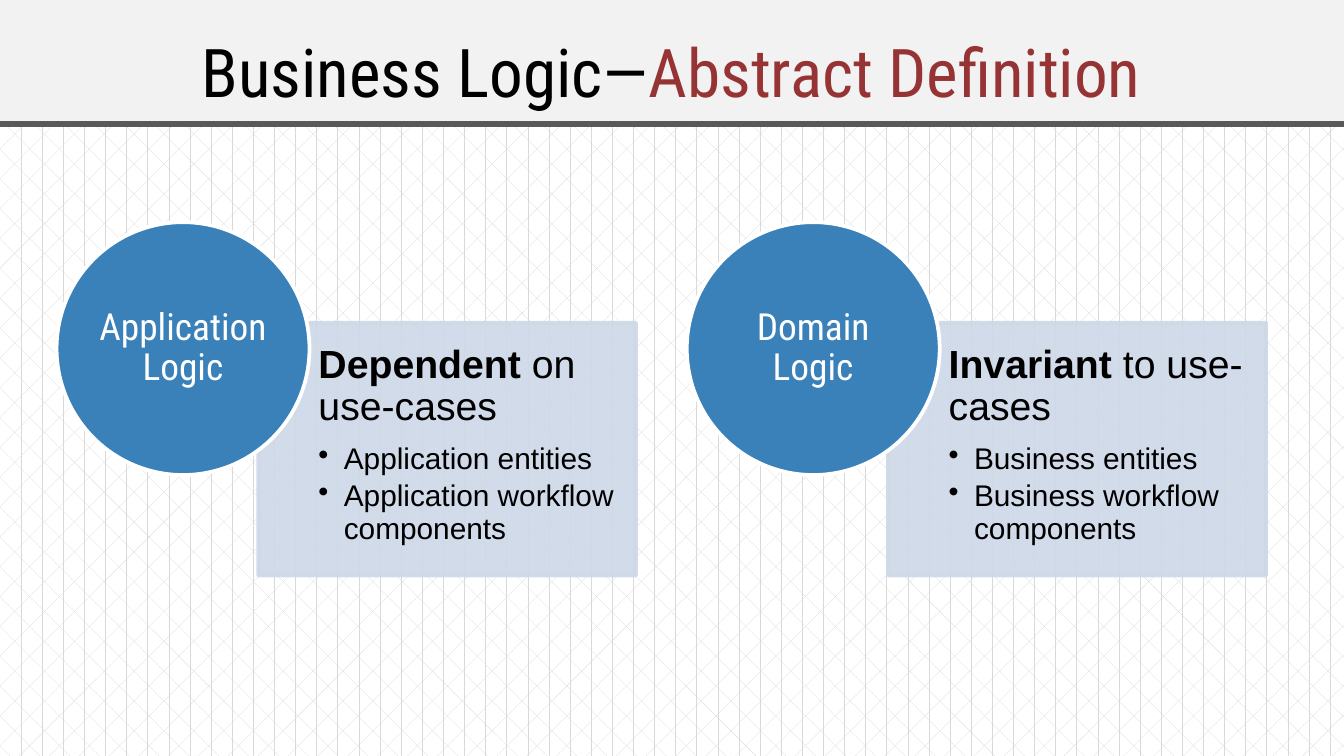
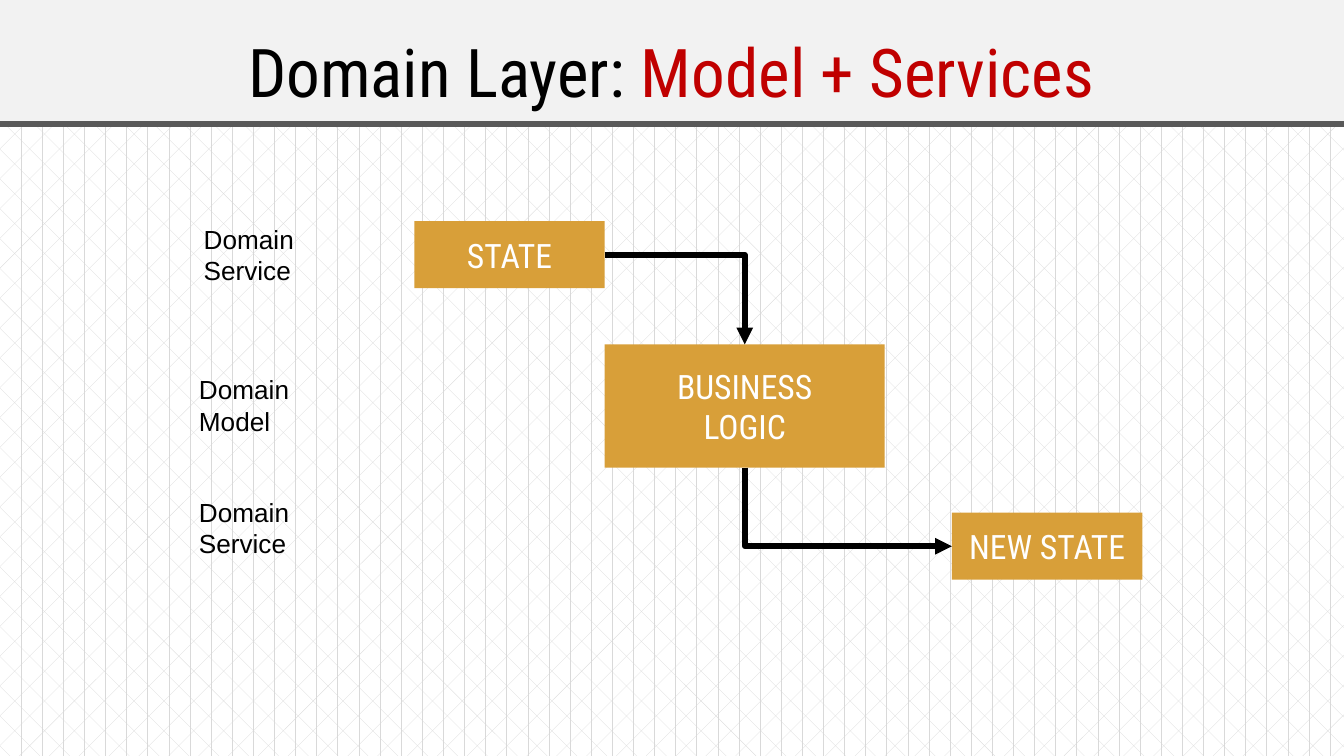
from dataclasses import dataclass
from lxml.etree import SubElement
from pptx import Presentation
from pptx.dml.color import RGBColor
from pptx.enum.dml import MSO_PATTERN
from pptx.enum.shapes import MSO_CONNECTOR, MSO_SHAPE
from pptx.enum.text import MSO_ANCHOR, MSO_AUTO_SIZE, PP_ALIGN
from pptx.oxml.ns import qn
from pptx.util import Cm, Pt


@dataclass(frozen=True)
class Theme:
    black: str = "000000"
    white: str = "FFFFFF"
    grid: str = "D9D9D9"
    band: str = "F2F2F2"
    rule: str = "595959"
    wine: str = "963334"
    red: str = "C00000"
    blue: str = "3A81BA"
    pale: str = "CED8E7"
    gold: str = "D89F39"
    head: str = "Roboto Condensed"
    body: str = "Arial"
    title: int = 36
    lead: int = 21
    disc: int = 20
    box: int = 18
    item: int = 16
    label: int = 14


THEME = Theme()
MID = {"alignment": PP_ALIGN.CENTER}
LEFT = {"alignment": PP_ALIGN.LEFT}
TIGHT = {"line_spacing": 0.9}


def put(obj, vals):
    for name, val in vals.items():
        setattr(obj, name, val)


def place(shape, left, top, width, height):
    put(shape, {"left": Cm(left), "top": Cm(top),
                "width": Cm(width), "height": Cm(height)})


def pads(left, top, right, bottom):
    return {"margin_left": Cm(left), "margin_top": Cm(top),
            "margin_right": Cm(right), "margin_bottom": Cm(bottom)}


def paint(shape, color, edge=None, width=0):
    shape.fill.solid()
    shape.fill.fore_color.rgb = RGBColor.from_string(color)
    if edge:
        shape.line.color.rgb = RGBColor.from_string(edge)
        shape.line.width = Pt(width)
    else:
        shape.line.fill.background()


def font(name, size, color, bold=False):
    return {"name": name, "size": Pt(size), "bold": bold}, color


def write(frame, paras, form):
    put(frame, {"word_wrap": True, **form})
    for num, (runs, style) in enumerate(paras):
        para = frame.add_paragraph() if num else frame.paragraphs[0]
        put(para, style)
        for text, (face, color) in runs:
            run = para.add_run()
            run.text = text
            put(run.font, face)
            run.font.color.rgb = RGBColor.from_string(color)


def add_form(slide, kind, spot):
    shape = slide.shapes.add_shape(kind, *map(Cm, spot))
    shape.shadow.inherit = False
    return shape


def add_page(deck, first, second, color):
    slide = deck.slides.add_slide(deck.slide_layouts[5])
    title = slide.shapes.title
    place(title, -0.43, -0.25, 26.24, 2.59)
    paint(title, THEME.band, THEME.rule, 3)
    runs = [(text, font(THEME.head, THEME.title, ink))
            for text, ink in ((first, THEME.black), (second, color))]
    write(title.text_frame, [(runs, MID)],
          {"vertical_anchor": MSO_ANCHOR.BOTTOM,
           "auto_size": MSO_AUTO_SIZE.NONE, **pads(0.25, 0.25, 0.25, 0.25)})
    return slide


def add_card(slide, left, name, lead, rest, items):
    card = add_form(slide, MSO_SHAPE.RECTANGLE, (left + 3.81, 6.1, 7.14, 4.78))
    paint(card, THEME.pale, THEME.pale, 2)
    for tint in card._element.spPr.iter(qn("a:srgbClr")):
        SubElement(tint, qn("a:alpha"), val="90000")
    runs = [(lead, font(THEME.body, THEME.lead, THEME.black, True)),
            (rest, font(THEME.body, THEME.lead, THEME.black))]
    paras = [(runs, {**LEFT, **TIGHT, "space_after": Pt(8)})]
    look = font(THEME.body, THEME.item, THEME.black)
    point = {**LEFT, **TIGHT, "level": 1, "space_after": Pt(2.7)}
    paras += [([(item, look)], point) for item in items]
    write(card.text_frame, paras, {"vertical_anchor": MSO_ANCHOR.TOP,
                                   **pads(1.14, 0.41, 0.41, 0.41)})
    for para in card.text_frame.paragraphs[1:]:
        props = para._p.get_or_add_pPr()
        props.set("marL", str(Cm(0.48)))
        props.set("indent", str(-Cm(0.48)))
        SubElement(props, qn("a:buChar"), char="•")

    disc = add_form(slide, MSO_SHAPE.OVAL, (left, 4.2, 4.78, 4.78))
    paint(disc, THEME.blue, THEME.white, 2)
    look = font(THEME.head, THEME.disc, THEME.white)
    write(disc.text_frame, [([(name, look)], {**MID, **TIGHT})],
          {"vertical_anchor": MSO_ANCHOR.MIDDLE, **pads(0, 0, 0, 0)})


def add_box(slide, lines, *spot):
    box = add_form(slide, MSO_SHAPE.RECTANGLE, spot)
    paint(box, THEME.gold)
    look = font(THEME.head, THEME.box, THEME.white)
    write(box.text_frame, [([(line, look)], MID) for line in lines],
          {"vertical_anchor": MSO_ANCHOR.MIDDLE})
    return box


def add_label(slide, text, left, top):
    label = slide.shapes.add_textbox(Cm(left), Cm(top), Cm(2.97), Cm(1.45))
    look = font(THEME.body, THEME.label, THEME.black)
    write(label.text_frame, [([(text, look)], LEFT)],
          {"auto_size": MSO_AUTO_SIZE.SHAPE_TO_FIT_TEXT})


def add_bend(slide, start, exit, end, entry, down=False):
    wire = slide.shapes.add_connector(MSO_CONNECTOR.ELBOW, 0, 0, 0, 0)
    wire.begin_connect(start, exit)
    wire.end_connect(end, entry)
    props = wire._element.spPr
    props.find(qn("a:prstGeom")).set("prst", "bentConnector2")
    if down:
        wide, high = wire.width, wire.height
        shift = (wide - high) // 2
        put(wire, {"left": wire.left + shift, "top": wire.top - shift,
                   "width": high, "height": wide})
        frame = props.find(qn("a:xfrm"))
        frame.set("rot", "16200000")
        frame.set("flipH", "1")
    wire.line.color.rgb = RGBColor.from_string(THEME.black)
    wire.line.width = Pt(3)
    SubElement(props.find(qn("a:ln")), qn("a:tailEnd"), type="triangle")
    SubElement(props, qn("a:effectLst"))


def set_ground(deck):
    fill = deck.slide_master.background.fill
    fill.patterned()
    fill.pattern = MSO_PATTERN.DIVOT
    fill.fore_color.rgb = RGBColor.from_string(THEME.grid)
    fill.back_color.rgb = RGBColor.from_string(THEME.white)


def draw_logic(deck):
    slide = add_page(deck, "Business Logic—", "Abstract Definition", THEME.wine)
    cards = (("Application", "Dependent", " on use-cases", "Application"),
             ("Domain", "Invariant", " to use-cases", "Business"))
    for num, (name, lead, rest, kind) in enumerate(cards):
        add_card(slide, 1.07 + 11.91 * num, f"{name} Logic", lead, rest,
                 (f"{kind} entities", f"{kind} workflow components"))


def draw_layer(deck):
    slide = add_page(deck, "Domain Layer: ", "Model + Services", THEME.red)
    logic = add_box(slide, ("BUSINESS", "LOGIC"), 11.43, 6.51, 5.29, 2.33)
    state = add_box(slide, ("STATE",), 7.83, 4.18, 3.6, 1.27)
    fresh = add_box(slide, ("NEW STATE",), 17.99, 9.69, 3.6, 1.27)
    add_bend(slide, state, 3, logic, 0)
    add_bend(slide, logic, 2, fresh, 1, down=True)
    for text, left, top in (("Domain Service", 3.6, 4.1),
                            ("Domain Model", 3.51, 6.94),
                            ("Domain Service", 3.51, 9.26)):
        add_label(slide, text, left, top)


def main():
    deck = Presentation()
    put(deck, {"slide_width": Cm(25.4), "slide_height": Cm(14.29)})
    set_ground(deck)
    draw_logic(deck)
    draw_layer(deck)
    deck.save("out.pptx")


if __name__ == "__main__":
    main()
